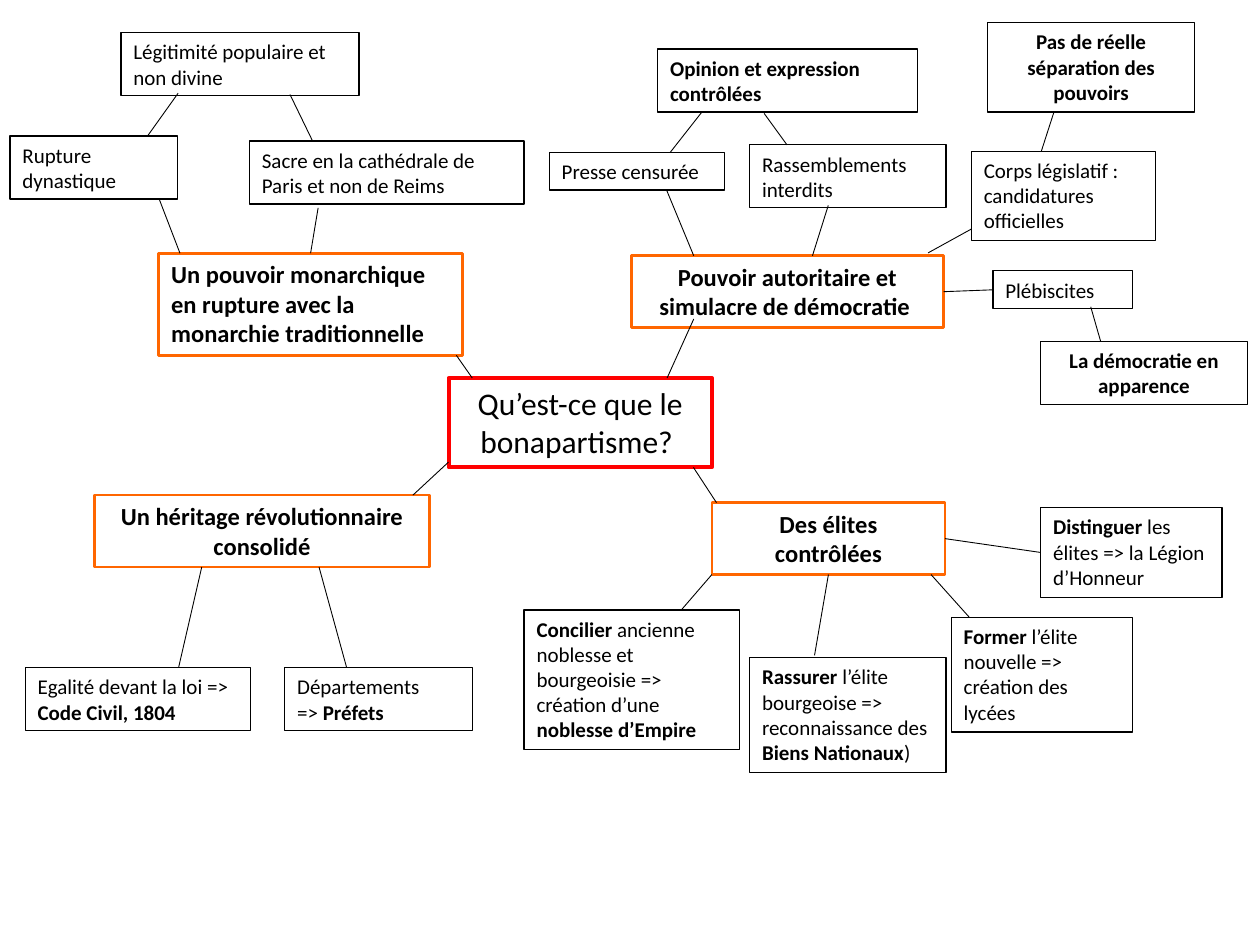
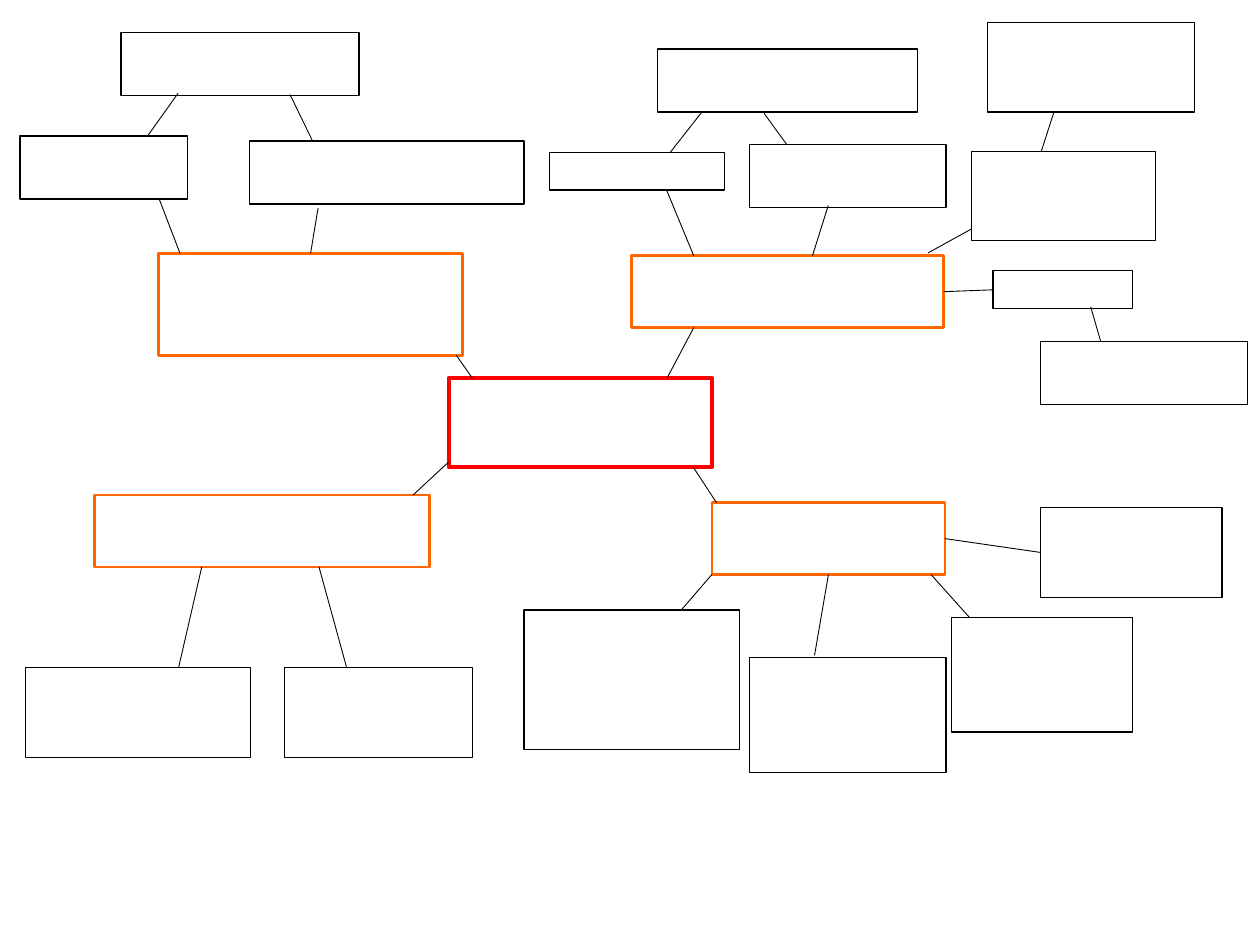
from lxml import etree
from pptx import Presentation
from pptx.dml.color import RGBColor
from pptx.enum.shapes import MSO_CONNECTOR, MSO_SHAPE
from pptx.enum.text import MSO_ANCHOR, MSO_AUTO_SIZE, PP_ALIGN
from pptx.oxml.ns import qn
from pptx.util import Inches, Pt

RECT, STRAIGHT = MSO_SHAPE.RECTANGLE, MSO_CONNECTOR.STRAIGHT
TOP, FIXED = MSO_ANCHOR.TOP, MSO_AUTO_SIZE.NONE
LEFT, CENTER = PP_ALIGN.LEFT, PP_ALIGN.CENTER

FONT, BLACK = "Calibri", "000000"
CELL = 0.1  # the slide is a grid of 100 columns by 75 rows
TITLE_ONLY, BLANK = 5, 6

# level: line colour, line width, text size
LEVELS = {
    "question": ("FF0000", 2.25, 18),
    "heading": ("FF6600", 1.5, 14),
    "idea": (BLACK, 0.75, 12),
}

# Each branch: its origin, then name: (level, box from the origin, alignment, text).
# Text between ** is bold.
BRANCHES = [
    ((35.6, 30), {
        "question": ("question", (0, 0, 20.9, 7.1), CENTER, "Qu’est-ce que le bonapartisme? "),
    }),
    ((0.8, 2.6), {
        "monarchie": ("heading", (11.8, 17.5, 24.1, 8.1), LEFT,
                      "**Un pouvoir monarchique en rupture avec la monarchie traditionnelle**"),
        "rupture": ("idea", (0, 8.2, 13.3, 5), LEFT, "Rupture dynastique"),
        "légitimité": ("idea", (8.8, 0, 18.9, 5), LEFT, "Légitimité populaire et non divine"),
        "sacre": ("idea", (19, 8.6, 21.8, 5), LEFT,
                  "Sacre en la cathédrale de Paris et non de Reims"),
    }),
    ((43.6, 1.8), {
        "autorité": ("heading", (6.5, 18.5, 24.8, 5.7), CENTER,
                     "**Pouvoir autoritaire et simulacre de démocratie **"),
        "presse": ("idea", (0, 10.3, 13.9, 3), LEFT, "Presse censurée"),
        "rassemblements": ("idea", (15.9, 9.7, 15.6, 5), LEFT, "Rassemblements interdits"),
        "opinion": ("idea", (8.6, 2.1, 20.6, 5), LEFT, "**Opinion et expression contrôlées**"),
        "corps": ("idea", (33.5, 10.2, 14.6, 7.1), LEFT,
                  "Corps législatif : candidatures officielles"),
        "séparation": ("idea", (34.8, 0, 16.4, 7.1), CENTER,
                       "**Pas de réelle séparation des pouvoirs**"),
        "plébiscites": ("idea", (35.2, 19.7, 11.1, 3), LEFT, "Plébiscites"),
        "apparence": ("idea", (39, 25.3, 16.4, 5), CENTER, "**La démocratie en apparence**"),
    }),
    ((2, 39.3), {
        "héritage": ("heading", (5.5, 0, 26.6, 5.7), CENTER,
                     "**Un héritage révolutionnaire consolidé**"),
        "code": ("idea", (0, 13.7, 17.9, 5), LEFT,
                 "Egalité devant la loi => **Code Civil, 1804**"),
        "départements": ("idea", (20.6, 13.7, 14.9, 5), LEFT, "Départements\n=> **Préfets**"),
    }),
    ((41.6, 39.9), {
        "élites": ("heading", (14.9, 0, 18.5, 5.7), CENTER, "**Des élites contrôlées**"),
        "concilier": ("idea", (0, 8.5, 17.1, 11.1), LEFT,
                      "**Concilier** ancienne noblesse et bourgeoisie => création d’une "
                      "**noblesse d’Empire**"),
        "rassurer": ("idea", (17.9, 12.3, 15.6, 9.1), LEFT,
                     "**Rassurer** l’élite bourgeoise => reconnaissance des "
                     "**Biens Nationaux**)"),
        "former": ("idea", (33.9, 9.1, 14.4, 9.1), LEFT,
                   "**Former **l’élite nouvelle => création des lycées"),
        "distinguer": ("idea", (41, 0.4, 14.4, 7.1), LEFT,
                       "**Distinguer **les élites => la Légion d’Honneur"),
    }),
]

# Each end: a box name and the point reached, in shares of that box's width and height.
LINKS = [
    (("question", 0.09, 0), ("monarchie", 0.98, 1)),
    (("question", 0.83, 0), ("autorité", 0.2, 0.88)),
    (("question", 0, 0.94), ("héritage", 0.95, 0)),
    (("question", 0.93, 1), ("élites", 0.02, 0)),
    (("monarchie", 0.07, 0), ("rupture", 0.89, 1)),
    (("monarchie", 0.5, 0), ("sacre", 0.25, 1.06)),
    (("rupture", 0.82, 0), ("légitimité", 0.24, 0.96)),
    (("sacre", 0.23, 0), ("légitimité", 0.71, 0.98)),
    (("autorité", 0.2, 0), ("presse", 0.67, 1)),
    (("autorité", 0.58, 0), ("rassemblements", 0.4, 0.96)),
    (("autorité", 0.95, -0.04), ("corps", 0, 0.87)),
    (("autorité", 1, 0.5), ("plébiscites", 0, 0.5)),
    (("presse", 0.69, 0), ("opinion", 0.17, 1)),
    (("rassemblements", 0.19, 0), ("opinion", 0.41, 1.02)),
    (("corps", 0.38, 0), ("séparation", 0.32, 1)),
    (("plébiscites", 0.7, 0.95), ("apparence", 0.29, 0)),
    (("héritage", 0.32, 1), ("code", 0.68, 0)),
    (("héritage", 0.67, 1), ("départements", 0.33, 0)),
    (("élites", 0, 1), ("concilier", 0.73, 0)),
    (("élites", 0.5, 1), ("rassurer", 0.33, -0.02)),
    (("élites", 0.94, 1), ("former", 0.1, 0)),
    (("élites", 1, 0.5), ("distinguer", 0, 0.5)),
]
SIDES = {(0.5, 0): 0, (0, 0.5): 1, (0.5, 1): 2, (1, 0.5): 3}

# On the blank map: change of left edge and of height, and one line end.
BLANK_CHANGES = {"rupture": (0.8, 0), "code": (0, 2.1), "départements": (0, 2.1)}
BLANK_ENDS = {("autorité", 0.2, 0.88): ("autorité", 0.2, 1)}


def rgb(value):
    return RGBColor.from_string(value)


def cells(n):
    return Inches(n * CELL)


def set_line(line, color, width):
    line.color.rgb = rgb(color)
    line.width = Pt(width)


def write(tf, text, size, align):
    tf.word_wrap = True
    tf.auto_size = FIXED
    tf.vertical_anchor = TOP
    for i, line in enumerate(text.split("\n")):
        p = tf.add_paragraph() if i else tf.paragraphs[0]
        p.alignment = align
        for j, part in enumerate(line.split("**")):
            if part:
                r = p.add_run()
                r.text = part
                r.font.name, r.font.size = FONT, Pt(size)
                r.font.bold = j % 2 == 1
                r.font.color.rgb = rgb(BLACK)


def draw_box(s, level, box, align, text):
    """Draw one box; the question fills the title placeholder where there is one."""
    color, width, size = LEVELS[level]
    left, top, w, h = map(cells, box)
    if level == "question" and s.shapes.title is not None:
        sp = s.shapes.title
        sp.left, sp.top, sp.width, sp.height = left, top, w, h
    else:
        sp = s.shapes.add_shape(RECT, left, top, w, h)
        sp.shadow.inherit = False
    sp.fill.background()
    set_line(sp.line, color, width)
    if text:
        write(sp.text_frame, text, size, align)
    return sp


def draw_branch(s, origin, nodes, filled, changes):
    """Draw a branch from its origin; return name: (shape, box before changes)."""
    drawn = {}
    for name, (level, (x, y, w, h), align, text) in nodes.items():
        left, top = origin[0] + x, origin[1] + y
        dx, dh = changes.get(name, (0, 0))
        sp = draw_box(s, level, (left + dx, top, w, h + dh), align, text if filled else "")
        drawn[name] = sp, (left, top, w, h)
    return drawn


def draw_link(s, drawn, start, end):
    points = []
    for name, fx, fy in (start, end):
        x, y, w, h = drawn[name][1]
        points += [cells(x + fx * w), cells(y + fy * h)]
    c = s.shapes.add_connector(STRAIGHT, *points)
    set_line(c.line, BLACK, 0.5)
    etree.SubElement(c._element.spPr, qn("a:effectLst"))
    for join, (name, *point) in ((c.begin_connect, start), (c.end_connect, end)):
        side = SIDES.get(tuple(point))
        if side is not None:
            join(drawn[name][0], side)


def add_map(prs, layout, filled, changes, ends):
    s = prs.slides.add_slide(prs.slide_layouts[layout])
    drawn = {}
    for origin, nodes in BRANCHES:
        drawn.update(draw_branch(s, origin, nodes, filled, changes))
    for start, end in LINKS:
        draw_link(s, drawn, start, ends.get(end, end))


def main():
    prs = Presentation()
    prs.slide_width, prs.slide_height = cells(100), cells(75)
    add_map(prs, TITLE_ONLY, True, {}, {})
    add_map(prs, BLANK, False, BLANK_CHANGES, BLANK_ENDS)
    prs.save("out.pptx")


if __name__ == "__main__":
    main()
